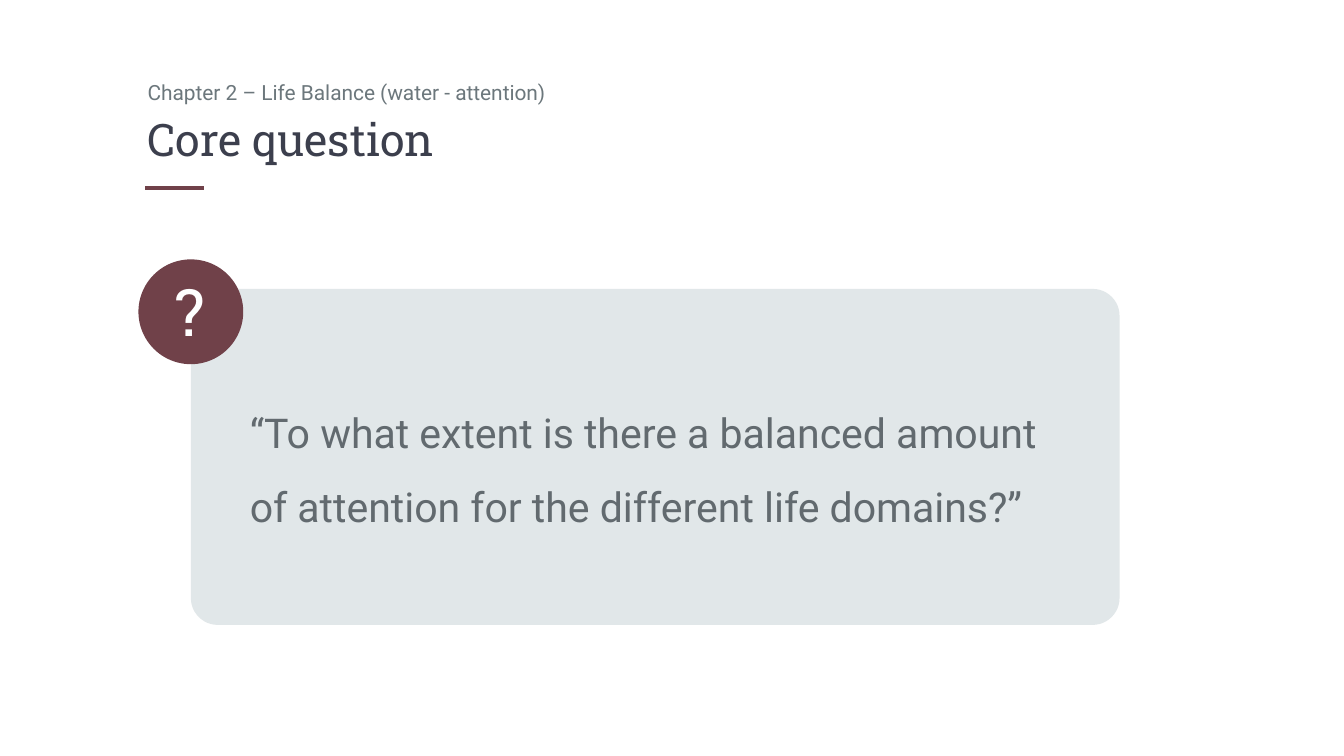
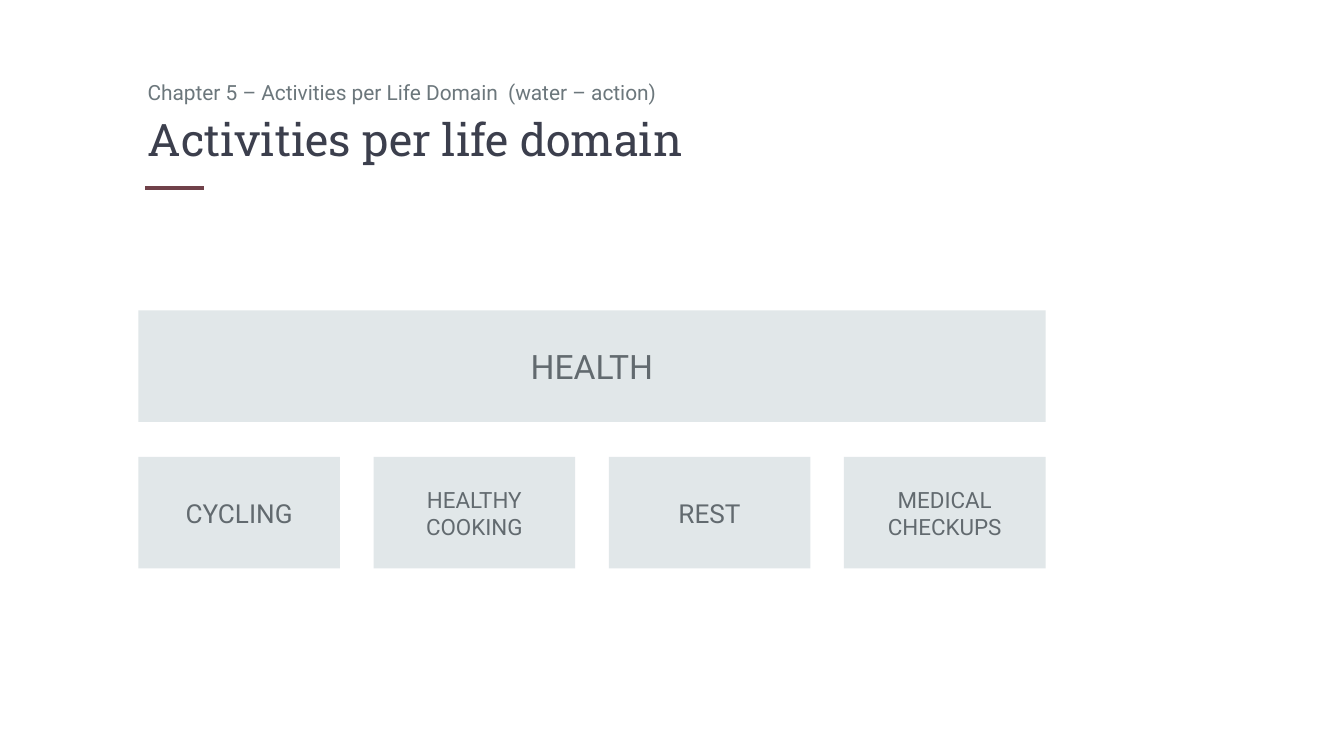
"""Build two workbook slides on life balance and activities per life domain."""
from typing import NamedTuple

from lxml.etree import SubElement
from pptx import Presentation
from pptx.dml.color import RGBColor
from pptx.enum.shapes import MSO_CONNECTOR as Connector, MSO_SHAPE as Preset
from pptx.enum.text import MSO_ANCHOR as Anchor, PP_ALIGN as Align
from pptx.oxml.ns import qn
from pptx.util import Inches, Pt

WIDTH = Inches(10)
HEIGHT = WIDTH * 9 // 16
COLUMN, ROW = WIDTH / 100, HEIGHT / 56.25

WHITE, WINE, MIST = "FFFFFF", "704149", "E1E7E9"
INK, SLATE, BODY = "3C3F4D", "6C777C", "626A6F"
SANS, SLAB = "Roboto", "Roboto Slab"


class Frame(NamedTuple):
    """A place on the grid: left and width in columns, top and height in rows."""
    left: float
    top: float
    width: float
    height: float

    def lengths(self) -> tuple[int, int, int, int]:
        """Return the frame as slide lengths."""
        return (round(self.left * COLUMN), round(self.top * ROW),
                round(self.width * COLUMN), round(self.height * ROW))


class Activity(NamedTuple):
    """An activity tile and its text size."""
    label: str
    size: float


CHAPTER_FRAME = Frame(10, 5.4, 55, 3.5)
TITLE_FRAME = Frame(10, 5.6, 83.3, 9.4)
RULE_FRAME = Frame(10.8, 14, 4.4, 0)
QUESTION_FRAME = Frame(14.2, 21.5, 69.1, 25)
BADGE_FRAME = Frame(10.3, 19.3, 7.8, 7.8)
MARK_FRAME = Frame(12.9, 20.2, 5.6, 6)

GRID_LEFT, DOMAIN_TOP, TILE_TOP = 10.3, 23.1, 34
TILE_WIDTH, TILE_HEIGHT, TILE_GAP = 15, 8.3, 2.5
ACTIVITIES = [
    Activity("CYCLING", 14),
    Activity("HEALTHY COOKING", 12),
    Activity("REST", 14),
    Activity("MEDICAL CHECKUPS", 12),
]


def color(value: str) -> RGBColor:
    """Turn a hex string into a colour."""
    return RGBColor.from_string(value)


def write(shape, text: str, *, size: float, ink: str = BODY, font: str = SANS,
          align=Align.LEFT, anchor=Anchor.MIDDLE, spacing: float = 1.0,
          insets: tuple[float, float] = (0.1, 0.05)) -> None:
    """Put one formatted paragraph into a shape."""
    frame = shape.text_frame
    frame.word_wrap = True
    frame.vertical_anchor = anchor
    frame.margin_left = frame.margin_right = Inches(insets[0])
    frame.margin_top = frame.margin_bottom = Inches(insets[1])
    paragraph = frame.paragraphs[0]
    paragraph.alignment = align
    paragraph.line_spacing = spacing
    run = paragraph.add_run()
    run.text = text
    run.font.name = font
    run.font.size = Pt(size)
    run.font.color.rgb = color(ink)


def add_text(slide, place: Frame, text: str, **style):
    """Add a text box with formatted text."""
    box = slide.shapes.add_textbox(*place.lengths())
    write(box, text, **style)
    return box


def add_panel(slide, place: Frame, preset=Preset.RECTANGLE, fill: str = MIST):
    """Add a flat filled shape without outline."""
    shape = slide.shapes.add_shape(preset, *place.lengths())
    shape.shadow.inherit = False
    shape.fill.solid()
    shape.fill.fore_color.rgb = color(fill)
    shape.line.fill.background()
    return shape


def add_rule(slide) -> None:
    """Add the short line under the title."""
    left, top, width, _ = RULE_FRAME.lengths()
    rule = slide.shapes.add_connector(Connector.STRAIGHT, left, top, left + width, top)
    rule.line.color.rgb = color(WINE)
    rule.line.width = Pt(2)
    SubElement(rule.element.spPr, qn("a:effectLst"))


def add_slide(presentation, chapter: str, title: str):
    """Add a blank slide with the shared heading."""
    slide = presentation.slides.add_slide(presentation.slide_layouts[6])
    slide.background.fill.solid()
    slide.background.fill.fore_color.rgb = color(WHITE)
    add_rule(slide)
    add_text(slide, CHAPTER_FRAME, chapter, size=11.2, ink=SLATE, anchor=Anchor.TOP)
    add_text(slide, TITLE_FRAME, title, size=24, ink=INK, font=SLAB)
    return slide


def build_question(presentation) -> None:
    """Build the core question slide."""
    slide = add_slide(presentation, "Chapter 2 – Life Balance (water - attention)",
                      "Core question")
    panel = add_panel(slide, QUESTION_FRAME, Preset.ROUNDED_RECTANGLE)
    panel.adjustments[0] = 0.08
    write(panel, "“To what extent is there a balanced amount of attention "
                 "for the different life domains?”",
          size=22, spacing=1.5, insets=(0.38, 0.38))
    add_panel(slide, BADGE_FRAME, Preset.OVAL, WINE)
    add_text(slide, MARK_FRAME, "?", size=35, ink=WHITE, font=SLAB,
             anchor=Anchor.TOP, insets=(0.01, 0))


def build_activities(presentation) -> None:
    """Build the slide with a life domain above its activities."""
    slide = add_slide(presentation,
                      "Chapter 5 – Activities per Life Domain  (water – action)",
                      "Activities per life domain")
    pitch = TILE_WIDTH + TILE_GAP
    domain_width = len(ACTIVITIES) * pitch - TILE_GAP
    domain = add_panel(slide, Frame(GRID_LEFT, DOMAIN_TOP, domain_width, TILE_HEIGHT))
    write(domain, "HEALTH", size=18, align=Align.CENTER)
    for index, activity in enumerate(ACTIVITIES):
        tile = add_panel(slide, Frame(GRID_LEFT + index * pitch, TILE_TOP,
                                      TILE_WIDTH, TILE_HEIGHT))
        write(tile, activity.label, size=activity.size, align=Align.CENTER)


def main() -> None:
    """Build and save the presentation."""
    presentation = Presentation()
    presentation.slide_width, presentation.slide_height = WIDTH, HEIGHT
    build_question(presentation)
    build_activities(presentation)
    presentation.save("out.pptx")


if __name__ == "__main__":
    main()
